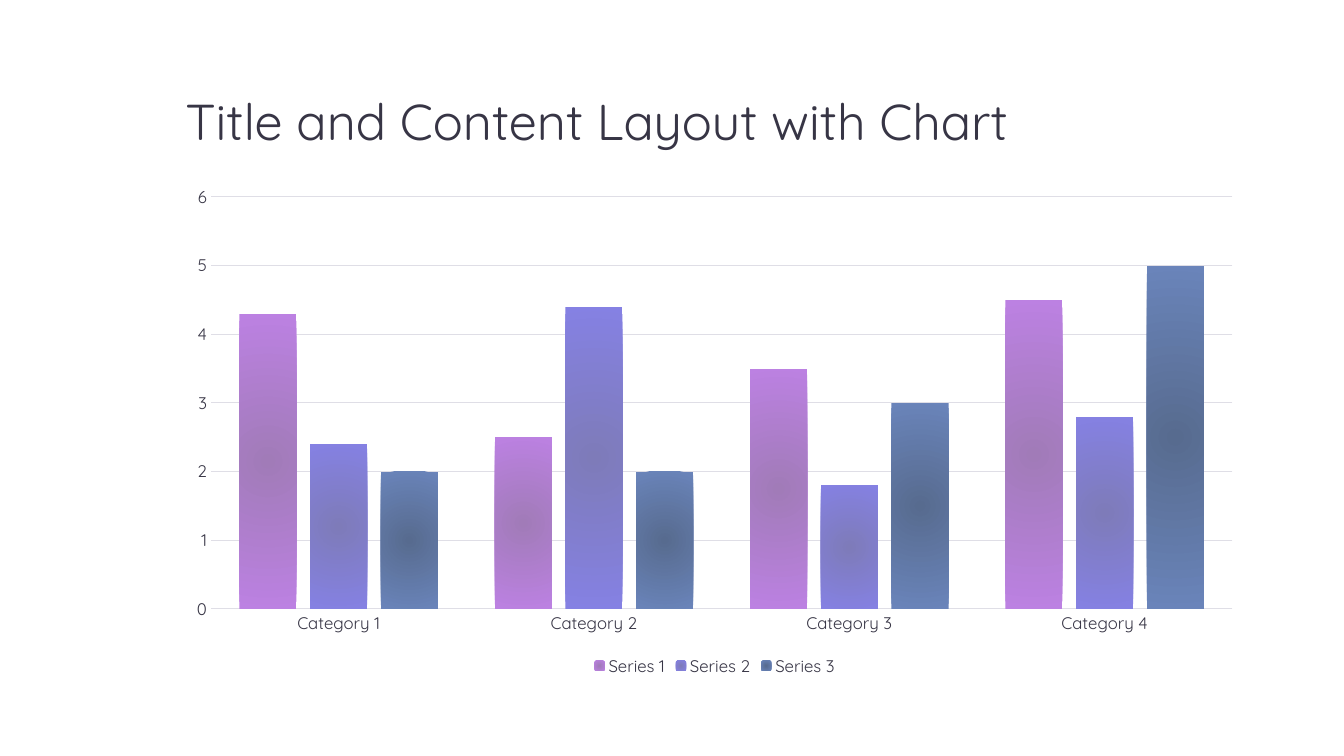
from lxml import etree
from pptx import Presentation
from pptx.chart.data import CategoryChartData
from pptx.dml.color import RGBColor
from pptx.enum.chart import XL_CHART_TYPE, XL_LEGEND_POSITION, XL_TICK_MARK
from pptx.enum.text import MSO_ANCHOR
from pptx.oxml.ns import qn
from pptx.util import Pt

COLUMNS = XL_CHART_TYPE.COLUMN_CLUSTERED
LEGEND_BOTTOM = XL_LEGEND_POSITION.BOTTOM
NO_TICK = XL_TICK_MARK.NONE
ANCHOR_BOTTOM = MSO_ANCHOR.BOTTOM

# Content
TITLE = "Title and Content Layout with Chart"
CATEGORIES = ["Category 1", "Category 2", "Category 3", "Category 4"]
SERIES = [  # name, values, centre colour, edge colour
    ("Series 1", (4.3, 2.5, 3.5, 4.5), "orchid_core", "orchid"),
    ("Series 2", (2.4, 4.4, 1.8, 2.8), "violet_core", "violet"),
    ("Series 3", (2, 2, 3, 5), "steel_core", "steel"),
]
COLOURS = {
    "background": "FFFFFF",
    "text": "373545",
    "grid": "DFDEE6",
    "orchid_core": "A17BB8",
    "orchid": "BC81E2",
    "violet_core": "7E7BB9",
    "violet": "8581E3",
    "steel_core": "576B8F",
    "steel": "6A84BA",
}
FONT = "Quicksand"
LEFT, WIDTH = 125.28, 770.4


def colour(name):
    return RGBColor.from_string(COLOURS[name])


def style_font(font, size):
    font.name = FONT
    font.size = Pt(size)
    font.color.rgb = colour("text")


def style_line(line):
    line.color.rgb = colour("grid")
    line.width = Pt(0.75)


def fill_radial(series, core, edge):
    fill = series.format.fill
    fill.gradient()
    for stop, name in zip(fill.gradient_stops, (core, edge)):
        stop.color.rgb = colour(name)
    gradient = series._element.find(".//" + qn("a:gradFill"))
    linear = gradient.find(qn("a:lin"))
    radial = etree.Element(qn("a:path"), {"path": "circle"})
    etree.SubElement(radial, qn("a:fillToRect"), {side: "100000" for side in "ltrb"})
    gradient.replace(linear, radial)


presentation = Presentation()
presentation.slide_width, presentation.slide_height = Pt(960), Pt(540)
slide = presentation.slides.add_slide(presentation.slide_layouts[6])
slide.background.fill.solid()
slide.background.fill.fore_color.rgb = colour("background")

# Title
title = slide.shapes.add_textbox(Pt(LEFT), Pt(13.68), Pt(WIDTH), Pt(97.92)).text_frame
title.word_wrap = True
title.vertical_anchor = ANCHOR_BOTTOM
title.text = TITLE
heading = title.paragraphs[0]
heading.line_spacing = 0.9
style_font(heading.runs[0].font, 36)

# Chart
chart_data = CategoryChartData()
chart_data.categories = CATEGORIES
for name, values, _, _ in SERIES:
    chart_data.add_series(name, values)
chart = slide.shapes.add_chart(
    COLUMNS, Pt(LEFT), Pt(126), Pt(WIDTH), Pt(360), chart_data
).chart
style_font(chart.font, 12)
chart.has_title = False

# Columns
plot = chart.plots[0]
plot.gap_width = 100
plot.overlap = -24
plot.vary_by_categories = False
for series, (_, _, core, edge) in zip(plot.series, SERIES):
    fill_radial(series, core, edge)

# Axes
for axis in (chart.category_axis, chart.value_axis):
    axis.major_tick_mark = axis.minor_tick_mark = NO_TICK
    style_font(axis.tick_labels.font, 12)
style_line(chart.category_axis.format.line)
value_axis = chart.value_axis
value_axis.minimum_scale, value_axis.maximum_scale, value_axis.major_unit = 0, 6, 1
value_axis.format.line.fill.background()
value_axis.has_major_gridlines = True
style_line(value_axis.major_gridlines.format.line)

# Legend
chart.has_legend = True
chart.legend.position = LEGEND_BOTTOM
chart.legend.include_in_layout = False
style_font(chart.legend.font, 12)

presentation.save("out.pptx")
